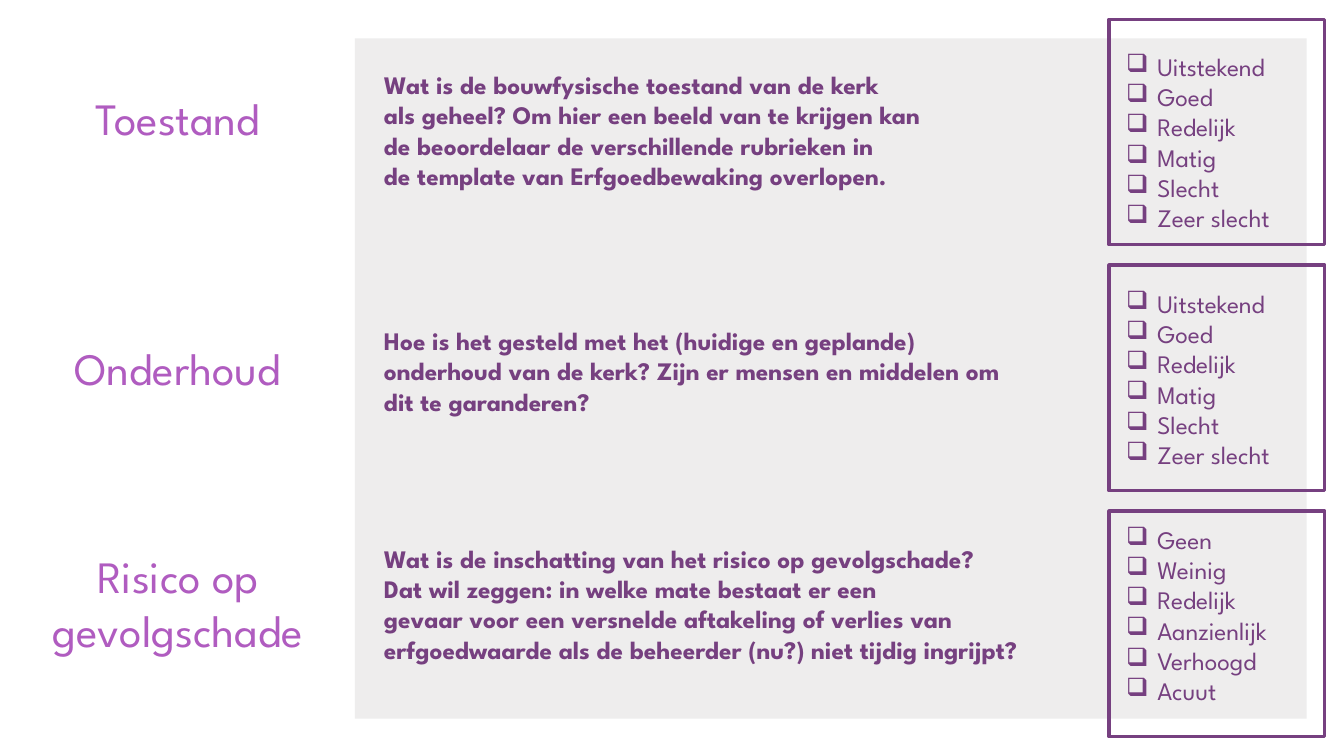
from lxml import etree
from pptx import Presentation
from pptx.dml.color import RGBColor
from pptx.enum.shapes import MSO_SHAPE
from pptx.enum.text import MSO_ANCHOR, PP_ALIGN
from pptx.oxml.ns import qn
from pptx.util import Inches, Pt

RECT = MSO_SHAPE.RECTANGLE
TOP, MIDDLE = MSO_ANCHOR.TOP, MSO_ANCHOR.MIDDLE
LEFT, CENTER = PP_ALIGN.LEFT, PP_ALIGN.CENTER

FONT = "League Spartan"
COLORS = {"panel": "EEEDED", "dark": "764080", "title": "B05CC0"}
GRADES = ["Uitstekend", "Goed", "Redelijk", "Matig", "Slecht", "Zeer slecht"]
RISKS = ["Geen", "Weinig", "Redelijk", "Aanzienlijk", "Verhoogd", "Acuut"]

# Each row: title and its top, question paragraphs with top and width,
# choices and their top. A line end inside a paragraph is a line break.
ROWS = [
    ("Toestand", 0.76,
     ["Wat is de bouwfysische toestand van de kerk\n"
      "als geheel? Om hier een beeld van te krijgen kan\n"
      "de beoordelaar de verschillende rubrieken in\n"
      "de template van Erfgoedbewaking overlopen."], 0.64, 6.96,
     GRADES, 0.46),
    ("Onderhoud", 3.24,
     ["Hoe is het gesteld met het (huidige en geplande) onderhoud van de "
      "kerk? Zijn er mensen en middelen om dit te garanderen?"], 3.18, 6.58,
     GRADES, 2.81),
    ("Risico op gevolgschade", 5.57,
     ["Wat is de inschatting van het risico op gevolgschade?",
      "Dat wil zeggen: in welke mate bestaat er een\n"
      "gevaar voor een versnelde aftakeling of verlies van erfgoedwaarde "
      "als de beheerder (nu?) niet tijdig ingrijpt?"], 5.34, 7.29,
     RISKS, 5.15),
]
FRAME_TOP, FRAME_STEP = 0.19, 2.44


def color(name):
    return RGBColor.from_string(COLORS[name])


def add_rect(slide, box, fill=None, line=None):
    rect = slide.shapes.add_shape(RECT, *map(Inches, box))
    rect.shadow.inherit = False
    if fill:
        rect.fill.solid()
        rect.fill.fore_color.rgb = color(fill)
    else:
        rect.fill.background()
    if line:
        rect.line.color.rgb = color(line)
        rect.line.width = Pt(2.25)
    else:
        rect.line.fill.background()


def add_check(para):
    """Give the paragraph a hanging checkbox bullet."""
    props = para._p.get_or_add_pPr()
    props.set("marL", str(Inches(0.31)))
    props.set("indent", str(-Inches(0.31)))
    etree.SubElement(props, qn("a:buChar"), char="❑")
    tabs = etree.SubElement(props, qn("a:tabLst"))
    etree.SubElement(tabs, qn("a:tab"), pos=str(Inches(0.25)), algn="l")


def add_text(slide, box, lines, size=18, hue="dark", bold=False,
             align=LEFT, anchor=TOP, check=False):
    frame = slide.shapes.add_textbox(*map(Inches, box)).text_frame
    frame.word_wrap = True
    frame.vertical_anchor = anchor
    for i, line in enumerate(lines):
        para = frame.add_paragraph() if i else frame.paragraphs[0]
        para.text = line.replace("\n", "\v")
        para.alignment = align
        if check:
            add_check(para)
        font = para.font
        font.name, font.size, font.bold = FONT, Pt(size), bold
        font.color.rgb = color(hue)


def main():
    deck = Presentation()
    deck.slide_width, deck.slide_height = Inches(13.33), Inches(7.5)
    slide = deck.slides.add_slide(deck.slide_layouts[6])
    add_rect(slide, (3.52, 0.38, 9.44, 6.75), fill="panel")
    for i, row in enumerate(ROWS):
        title, title_top, ask, ask_top, ask_width, picks, pick_top = row
        add_rect(slide, (11, FRAME_TOP + i * FRAME_STEP, 2.14, 2.24),
                 line="dark")
        add_text(slide, (0.01, title_top, 3.51, 0.82), [title], 32, "title",
                 align=CENTER, anchor=MIDDLE)
        add_text(slide, (3.71, ask_top, ask_width, 1.66), ask, bold=True)
        add_text(slide, (11.07, pick_top, 2.06, 1.92), picks, check=True)
    deck.save("out.pptx")


if __name__ == "__main__":
    main()
